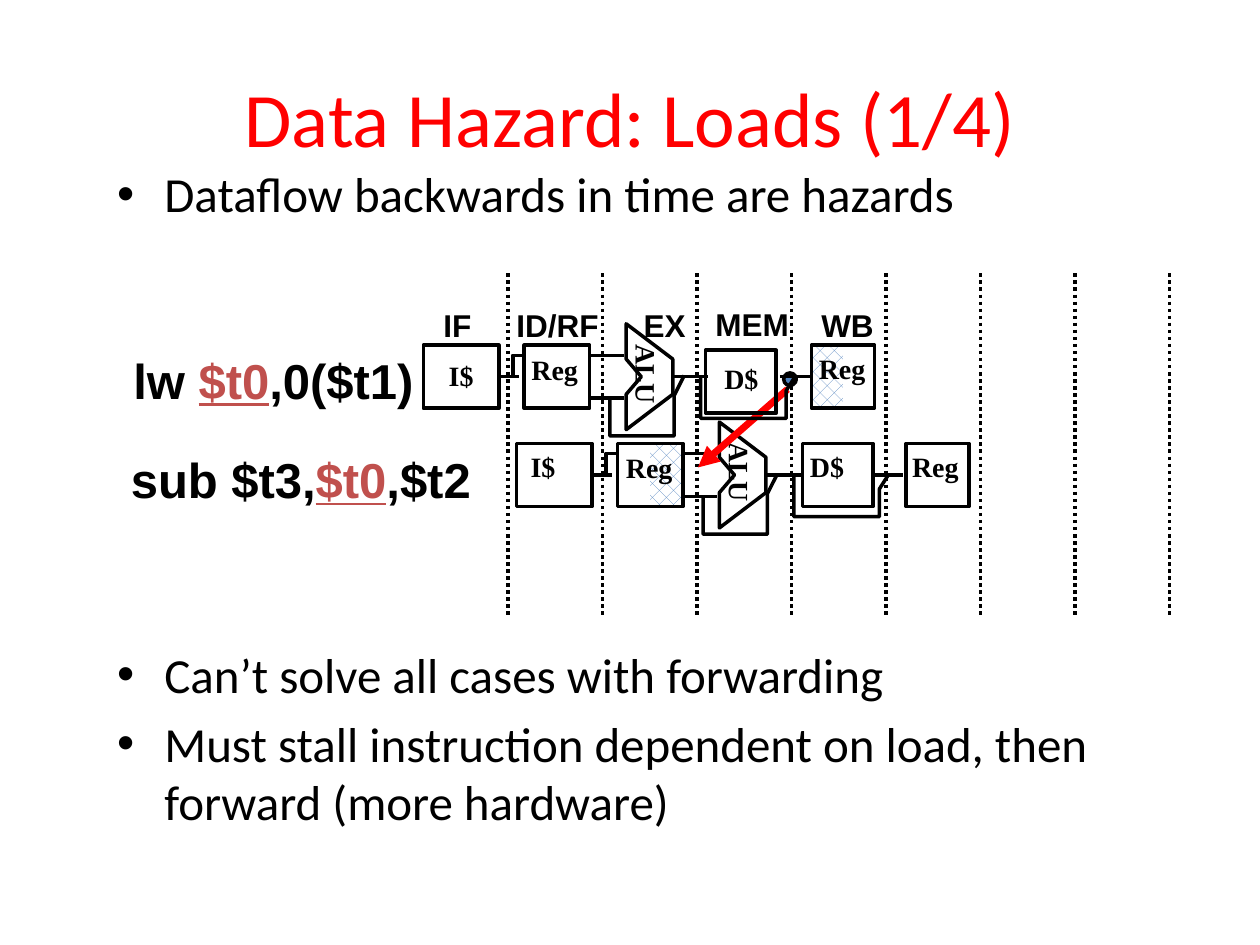
import pptx
import pptx.util
import pptx.dml.color
import pptx.enum.dml
import pptx.enum.shapes
import pptx.enum.text
import pptx.oxml.ns
import lxml.etree

Inches, Pt = pptx.util.Inches, pptx.util.Pt
qn = pptx.oxml.ns.qn

# Content
COLORS = {"ink": "000000", "alert": "FF0000", "register": "C0504D",
          "blue": "4F81BD", "white": "FFFFFF"}
TITLE = "Data Hazard: Loads (1/4)"
# text, space before in points (None keeps the template's)
BULLETS = [
    ("Dataflow backwards in time are hazards", None),
    ("Can’t solve all cases with forwarding", 241),  # room for the diagram
    ("Must stall instruction dependent on load, then forward (more hardware)", None),
]
# text, left, top, width
STAGES = [("IF", 3.42, 2.38, 0.43), ("ID/RF", 4.0, 2.38, 0.86),
          ("EX", 5.01, 2.38, 0.55), ("MEM", 5.58, 2.37, 0.8),
          ("WB", 6.42, 2.38, 0.63)]
# Units: text, label left and top, box left, top and half width, hatched half
LOAD = {
    "at": (0, 0),
    "code": (["lw ", "$t0", ",0($t1)"], 0.96, 2.73, 2.45),
    "units": [("I$", 3.46, 2.8, 3.36, 2.74, 0.3, None),
              ("Reg", 4.12, 2.75, 4.16, 2.74, 0.26, None),
              ("D$", 5.65, 2.82, 5.6, 2.78, 0.28, None),
              ("Reg", 6.4, 2.74, 6.44, 2.74, 0.25, "left")],
}
SUB = {
    "at": (0.74, 0.78),
    "code": (["sub $t3,", "$t0", ",$t2"], 0.94, 3.52, 2.93),
    "units": [("I$", 4.11, 3.52, 4.1, 3.52, 0.3, None),
              ("Reg", 4.87, 3.53, 4.9, 3.52, 0.26, "right"),
              ("D$", 6.33, 3.52, 6.37, 3.52, 0.28, None),
              ("Reg", 7.14, 3.52, 7.19, 3.52, 0.25, None)],
}
LABEL_WIDTH = {"I$": 0.4, "Reg": 0.57, "D$": 0.48}
# Paths of the load row; the sub row is the same, shifted
ALU = [(4.97, 3.13), (5.09, 2.99), (4.97, 2.85), (4.97, 2.57),
       (5.34, 2.85), (5.34, 3.13), (4.97, 3.41), (4.97, 3.13)]
BYPASSES = [
    [(4.07, 2.99), (4.07, 2.82), (4.15, 2.82)],
    [(5.56, 2.99), (5.56, 3.32), (6.24, 3.32), (6.24, 3.1), (6.31, 2.99)],
    [(4.84, 3.16), (4.84, 3.46), (5.35, 3.46), (5.35, 3.14), (5.43, 2.98)],
]
WIRES = [(3.96, 4.12, 2.99), (4.68, 4.95, 2.82), (4.68, 4.95, 3.16),
         (5.35, 5.62, 2.99), (6.19, 6.43, 2.99)]  # from x, to x, y

prs = pptx.Presentation()
prs.slide_width, prs.slide_height = Inches(10), Inches(7.5)
s = prs.slides.add_slide(prs.slide_layouts[1])


def rgb(name):
    return pptx.dml.color.RGBColor.from_string(COLORS[name])


def place(sp, left, top, width, height):
    sp.left, sp.top, sp.width, sp.height = map(Inches, (left, top, width, height))


def write(p, text, font="Calibri", size=28, color="ink", bold=None, underline=None):
    r = p.add_run()
    r.text = text
    r.font.name, r.font.size = font, Pt(size)
    r.font.bold, r.font.underline = bold, underline
    r.font.color.rgb = rgb(color)


def text_box(left, top, width, height, wrap=False, centered=False):
    sp = s.shapes.add_textbox(*map(Inches, (left, top, width, height)))
    tf = sp.text_frame
    tf.word_wrap = wrap
    tf.auto_size = pptx.enum.text.MSO_AUTO_SIZE.SHAPE_TO_FIT_TEXT
    if centered:
        tf.paragraphs[0].alignment = pptx.enum.text.PP_ALIGN.CENTER
    return sp, tf.paragraphs[0]


def stroke(sp, color="ink", width=2):
    sp.line.color.rgb = rgb(color)
    sp.line.width = Pt(width)


def line(x1, y1, x2, y2, color="ink", width=2, dash=None, arrow=False):
    c = s.shapes.add_connector(pptx.enum.shapes.MSO_CONNECTOR.STRAIGHT,
                               *map(Inches, (x1, y1, x2, y2)))
    stroke(c, color, width)
    if dash:
        c.line.dash_style = dash
    sp_pr = c.element.spPr
    if arrow:
        lxml.etree.SubElement(sp_pr.find(qn("a:ln")), qn("a:tailEnd"), type="triangle")
    lxml.etree.SubElement(sp_pr, qn("a:effectLst"))


def outline(points, dx=0, dy=0, hatched=False):
    pts = [(Inches(x + dx), Inches(y + dy)) for x, y in points]
    fb = s.shapes.build_freeform(*pts[0], scale=1.0)
    fb.add_line_segments(pts[1:], close=False)
    sp = fb.convert_to_shape()
    sp.shadow.inherit = False
    if hatched:
        sp.fill.patterned()
        sp.fill.pattern = pptx.enum.dml.MSO_PATTERN.PERCENT_25
        sp.fill.fore_color.rgb, sp.fill.back_color.rgb = rgb("blue"), rgb("white")
    else:
        sp.fill.background()
    stroke(sp)


def unit(text, label_x, label_y, x, y, half, hatch):
    mid = x + half
    for side, edge in (("left", x), ("right", mid + half)):
        outline([(mid, y), (edge, y), (edge, y + 0.5), (mid, y + 0.5)],
                hatched=side == hatch)
    _, p = text_box(label_x, label_y, LABEL_WIDTH[text], 0.36, centered=text == "I$")
    write(p, text, font="Times New Roman", size=16, bold=True)


def pipeline(row):
    dx, dy = row["at"]
    # Instruction, with the shared register marked
    parts, left, top, width = row["code"]
    _, p = text_box(left, top, width, 0.57)
    for part in parts:
        shared = part == "$t0"
        write(p, part, font="Arial", bold=True, underline=shared,
              color="register" if shared else "ink")
    for u in row["units"]:
        unit(*u)
    # ALU
    outline(ALU, dx, dy)
    sp, p = text_box(4.8 + dx, 2.79 + dy, 0.67, 0.36)
    sp.rotation = 90
    write(p, "ALU", font="Times New Roman", size=16, bold=True)
    # Wiring
    for x1, x2, y in WIRES:
        line(x1 + dx, y + dy, x2 + dx, y + dy)
    for points in BYPASSES:
        outline(points, dx, dy)


# Title and bullets
title, body = s.shapes.title, s.placeholders[1]
place(title, 0.5, 0.3, 9, 1.25)
write(title.text_frame.paragraphs[0], TITLE, size=44, color="alert")
place(body, 0.83, 1.25, 8.58, 5.56)
tf = body.text_frame
tf.auto_size = pptx.enum.text.MSO_AUTO_SIZE.NONE
for i, (text, gap) in enumerate(BULLETS):
    p = tf.add_paragraph() if i else tf.paragraphs[0]
    if gap:
        p.space_before = Pt(gap)
    write(p, text)

# Clock cycle boundaries
for i in range(8):
    x = 4.03 + 0.75 * i
    line(x, 2.17, x, 4.88, dash=pptx.enum.dml.MSO_LINE.ROUND_DOT)

# Sub row, then the backward dependence, then the load row
pipeline(SUB)
line(6.25, 3.09, 5.54, 3.71, color="alert", width=4, arrow=True)
dot = s.shapes.add_shape(pptx.enum.shapes.MSO_SHAPE.OVAL,
                         *map(Inches, (6.22, 2.96, 0.1, 0.1)))
dot.shadow.inherit = False
dot.fill.solid()
dot.fill.fore_color.rgb = rgb("blue")
stroke(dot)
pipeline(LOAD)

# Stage names
for text, left, top, width in STAGES:
    _, p = text_box(left, top, width, 0.4, wrap=True)
    write(p, text, font="Arial", size=18, bold=True)

prs.save("out.pptx")
